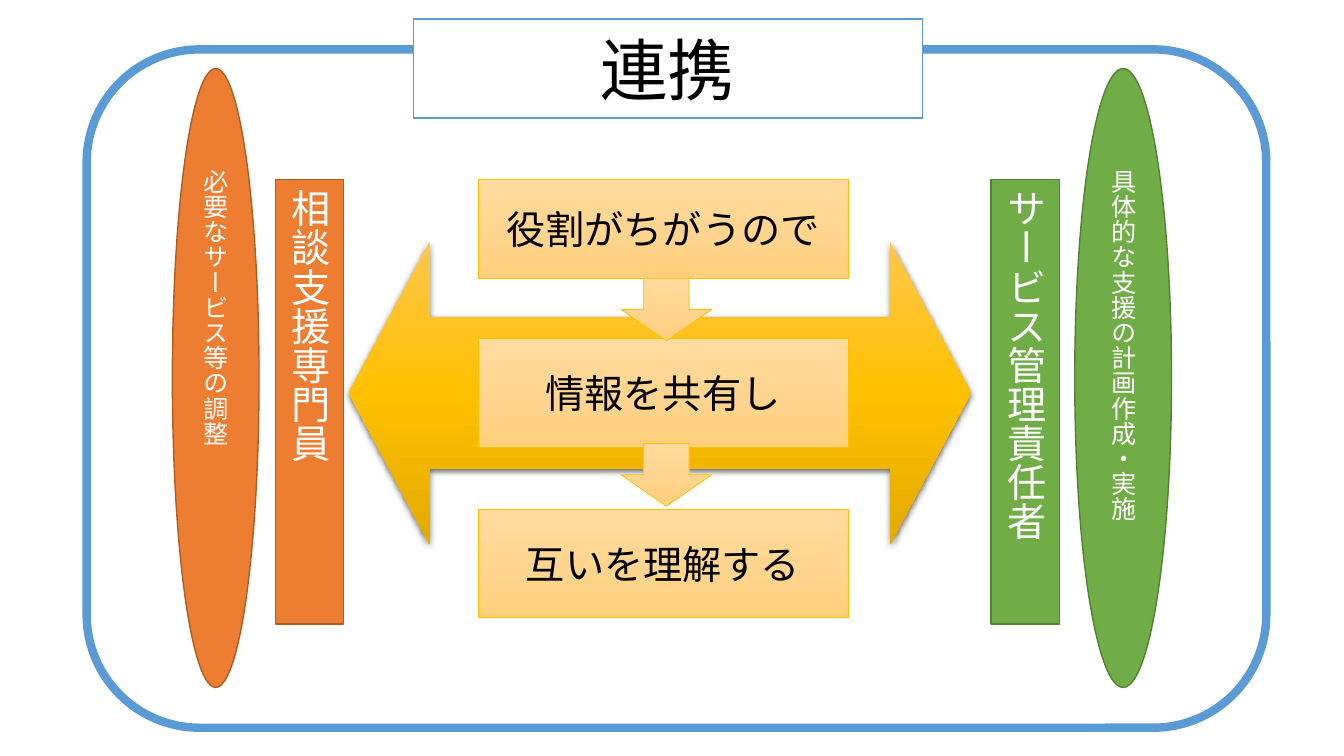
from copy import deepcopy

from lxml import etree
from pptx import Presentation
from pptx.dml.color import RGBColor
from pptx.enum.shapes import MSO_SHAPE
from pptx.enum.text import MSO_ANCHOR, MSO_AUTO_SIZE, PP_ALIGN
from pptx.oxml.ns import qn
from pptx.util import Inches, Pt

RECT = MSO_SHAPE.RECTANGLE
ROUND = MSO_SHAPE.ROUNDED_RECTANGLE
OVAL = MSO_SHAPE.OVAL
DOWN = MSO_SHAPE.DOWN_ARROW
BOTH = MSO_SHAPE.LEFT_RIGHT_ARROW
CENTER = PP_ALIGN.CENTER
MIDDLE = MSO_ANCHOR.MIDDLE
NO_FIT = MSO_AUTO_SIZE.NONE

FONT = "Noto Sans CJK JP"
WHITE = RGBColor(0xFF, 0xFF, 0xFF)
BLACK = RGBColor(0, 0, 0)
BLUE = RGBColor(0x5B, 0x9B, 0xD5)
ORANGE = RGBColor(0xED, 0x7D, 0x31)
RUST = RGBColor(0xAF, 0x5C, 0x24)
GREEN = RGBColor(0x70, 0xAD, 0x47)
MOSS = RGBColor(0x53, 0x80, 0x35)
GOLD = RGBColor(0xFF, 0xC0, 0x00)
PALE = [RGBColor(0xFF, 0xDB, 0x9E), RGBColor(0xFF, 0xD5, 0x90),
        RGBColor(0xFF, 0xD0, 0x7C)]
DEEP = [RGBColor(0xFF, 0xC6, 0x4B), GOLD, RGBColor(0xE3, 0xAB, 0x00)]


def paint(shape, fill, edge=None, width=1):
    """Fill with one colour or a top-to-bottom list, then set the outline."""
    if isinstance(fill, list):
        shape.fill.gradient()
        shape.fill.gradient_angle = 270
        stops = shape._element.spPr.find(".//" + qn("a:gsLst"))
        stops.insert(1, deepcopy(stops[0]))
        for i, (stop, color) in enumerate(zip(shape.fill.gradient_stops, fill)):
            stop.position = i / 2
            stop.color.rgb = color
    else:
        shape.fill.solid()
        shape.fill.fore_color.rgb = fill
    if edge is None:
        shape.line.fill.background()
    else:
        shape.line.color.rgb = edge
        shape.line.width = Pt(width)


def place(shape, box):
    shape.left, shape.top, shape.width, shape.height = map(Inches, box)


def draw(slide, kind, box, fill, edge=None, width=1):
    shape = slide.shapes.add_shape(kind, *map(Inches, box))
    shape.shadow.inherit = False
    paint(shape, fill, edge, width)
    return shape


def write(shape, text, size, color, upright=False):
    frame = shape.text_frame
    frame.word_wrap = True
    frame.auto_size = NO_FIT
    frame.vertical_anchor = MIDDLE
    if upright:
        frame._txBody.bodyPr.set("vert", "eaVert")
    para = frame.paragraphs[0]
    para.alignment = CENTER
    run = para.add_run()
    run.text = text
    run.font.size = Pt(size)
    run.font.name = FONT
    run.font.color.rgb = color
    east = etree.SubElement(run.font._element, qn("a:ea"))
    east.set("typeface", FONT)


def shade(shape):
    """Add a soft shadow below the shape."""
    effects = shape._element.spPr.find(qn("a:effectLst"))
    outer = etree.SubElement(effects, qn("a:outerShdw"), blurRad=str(Pt(4.5)),
                             dist=str(Pt(1.5)), dir="5400000", rotWithShape="0")
    color = etree.SubElement(outer, qn("a:srgbClr"), val="000000")
    etree.SubElement(color, qn("a:alpha"), val="63000")


def head(slide, text):
    """Turn the title into a rounded box on top of the frame."""
    title = slide.shapes.title
    place(title, (4.1, 0.19, 5.05, 0.98))
    geom = etree.SubElement(title._element.spPr, qn("a:prstGeom"), prst="roundRect")
    etree.SubElement(geom, qn("a:avLst"))
    paint(title, WHITE, BLUE)
    write(title, text, 48, BLACK)
    slide.shapes._spTree.append(title._element)


def main():
    deck = Presentation()
    deck.slide_width, deck.slide_height = Inches(13.33), Inches(7.5)
    slide = deck.slides.add_slide(deck.slide_layouts[5])

    draw(slide, ROUND, (0.86, 0.49, 11.7, 6.73), WHITE, BLUE, 6)
    link = draw(slide, BOTH, (3.46, 2.4, 6.17, 3), DEEP)
    link.adjustments[1] = 0.267
    shade(link)

    sides = [
        (2.73, "相談支援専門員", 1.71, 0.86, "必要なサービス等の調整", ORANGE, RUST),
        (9.83, "サービス管理責任者", 10.66, 0.96, "具体的な支援の計画作成・実施",
         GREEN, MOSS),
    ]
    for left, role, edge, width, task, fill, line in sides:
        bar = draw(slide, RECT, (left, 1.78, 0.68, 4.41), fill, line)
        write(bar, role, 28, WHITE, upright=True)
        oval = draw(slide, OVAL, (edge, 0.68, width, 6.14), fill, line)
        write(oval, task, 18, WHITE, upright=True)

    steps = [(1.78, 0.98, "役割がちがうので"), (3.36, 1.08, "情報を共有し"),
             (5.05, 1.08, "互いを理解する")]
    for top, height, text in steps:
        step = draw(slide, RECT, (4.74, top, 3.67, height), PALE, GOLD, 0.5)
        write(step, text, 28, BLACK)

    head(slide, "連携")
    for top in (2.76, 4.4):
        draw(slide, DOWN, (6.16, top, 0.9, 0.62), PALE, GOLD, 0.5)

    deck.save("out.pptx")


if __name__ == "__main__":
    main()
